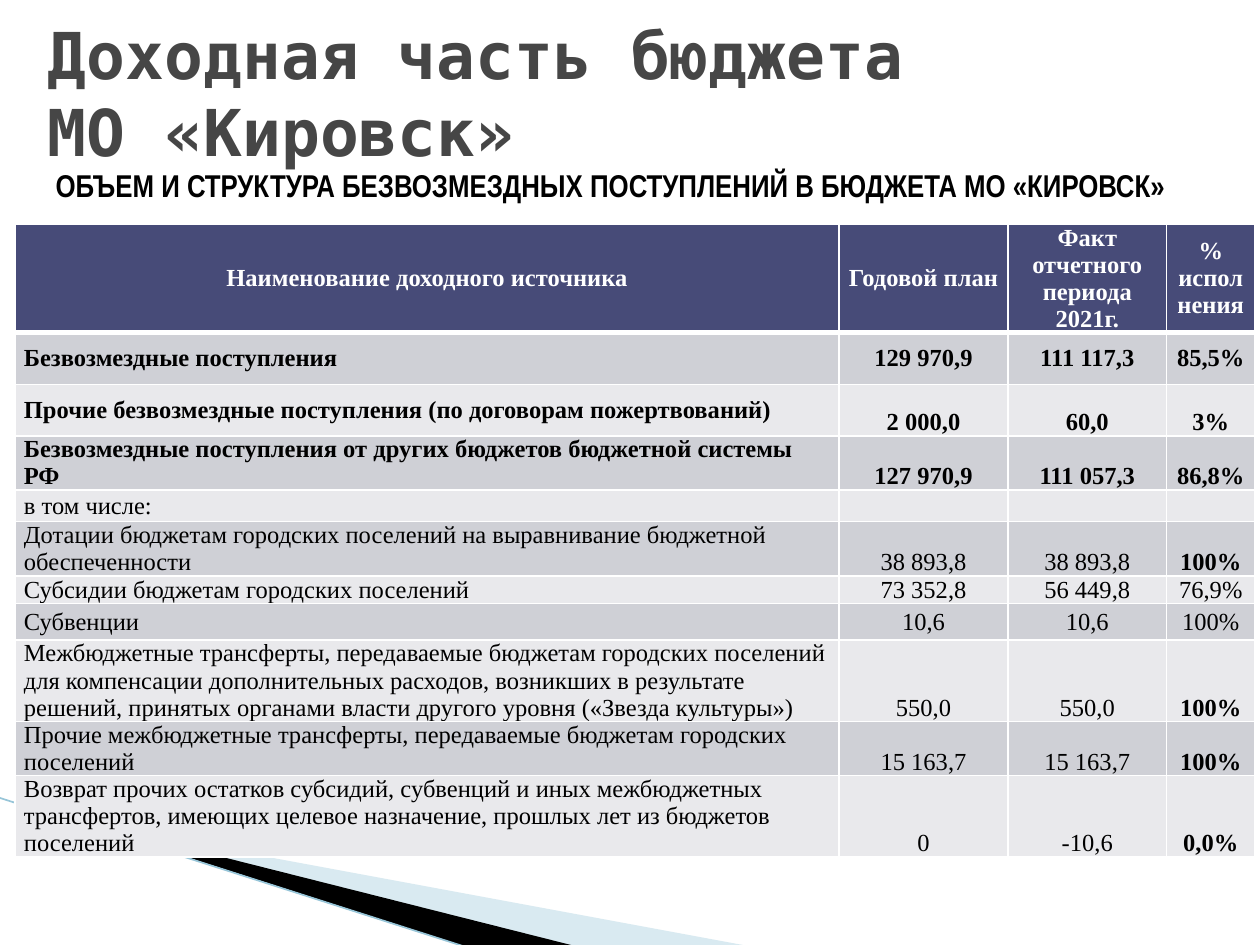
import pptx
import pptx.util
import pptx.dml.color
import pptx.enum.shapes
import pptx.enum.text
import pptx.oxml
import pptx.oxml.ns
from lxml import etree

Pt = pptx.util.Pt
ANCHOR = pptx.enum.text.MSO_ANCHOR
ALIGN = pptx.enum.text.PP_ALIGN

COLORS = {
    "title": "464646", "text": "000000", "white": "FFFFFF",
    "header": "474B78", "odd": "CFD0D6", "even": "E9E9EC",
    "wedge": "A0CBDC", "edge": "97C5D8",
}
TITLE_FONT, LABEL_FONT, TABLE_FONT = "DejaVu Sans Mono", "Arial Narrow", "Times New Roman"

COLUMN_WIDTHS = [65.4, 13.4, 12.6, 7]
HEADER = ["Наименование доходного источника", "Годовой план",
          "Факт отчетного периода 2021г.", "% исполнения"]
# height, texts, bold row, bold percentage, anchor of the values
M, B = ANCHOR.MIDDLE, ANCHOR.BOTTOM
ROWS = [
    (4.1, ["Безвозмездные поступления", "129 970,9", "111 117,3", "85,5%"], True, True, M),
    (4.1, ["Прочие безвозмездные поступления (по договорам пожертвований)",
           "2 000,0", "60,0", "3%"], True, True, B),
    (4.1, ["Безвозмездные поступления от других бюджетов бюджетной системы РФ",
           "127 970,9", "111 057,3", "86,8%"], True, True, B),
    (2.5, ["в том числе:", "", "", ""], False, False, M),
    (4.1, ["Дотации бюджетам городских поселений на выравнивание бюджетной обеспеченности",
           "38 893,8", "38 893,8", "100%"], False, True, B),
    (2.2, ["Субсидии бюджетам городских поселений",
           "73 352,8", "56 449,8", "76,9%"], False, False, M),
    (2.9, ["Субвенции", "10,6", "10,6", "100%"], False, False, M),
    (4.1, ["Межбюджетные трансферты, передаваемые бюджетам городских поселений для "
           "компенсации дополнительных расходов, возникших в результате решений, "
           "принятых органами власти другого уровня («Звезда культуры»)",
           "550,0", "550,0", "100%"], False, True, B),
    (4.1, ["Прочие межбюджетные трансферты, передаваемые бюджетам городских поселений",
           "15 163,7", "15 163,7", "100%"], False, True, B),
    (4.1, ["Возврат прочих остатков субсидий, субвенций и иных межбюджетных трансфертов, "
           "имеющих целевое назначение, прошлых лет из бюджетов поселений",
           "0", "-10,6", "0,0%"], False, True, B),
]


def rgb(name):
    return pptx.dml.color.RGBColor.from_string(COLORS[name])


class Deck:
    """Slide on a grid of 100 columns by 75 rows."""

    def __init__(self, prs):
        self.col, self.row = prs.slide_width / 100, prs.slide_height / 75
        self.s = prs.slides.add_slide(prs.slide_layouts[5])

    def x(self, cols):
        return int(cols * self.col)

    def y(self, rows):
        return int(rows * self.row)

    def box(self, left, top, width, height):
        return self.x(left), self.y(top), self.x(width), self.y(height)

    def set_text(self, tf, text, font, size, color, bold=True, align=ALIGN.LEFT):
        tf.text = text
        p = tf.paragraphs[0]
        p.alignment = align
        for r in p.runs:
            r.font.name, r.font.size, r.font.bold = font, Pt(size), bold
            r.font.color.rgb = rgb(color)
        if not text:
            etree.SubElement(p._p, pptx.oxml.ns.qn("a:endParaRPr"), sz=str(size * 100))

    def title(self, text, *place):
        sp = self.s.shapes.title
        sp.left, sp.top, sp.width, sp.height = self.box(*place)
        tf = sp.text_frame
        tf.word_wrap, tf.vertical_anchor = True, ANCHOR.MIDDLE
        tf.auto_size = pptx.enum.text.MSO_AUTO_SIZE.NONE
        self.set_text(tf, text, TITLE_FONT, 36.9, "title")

    def label(self, text, *place):
        tf = self.s.shapes.add_textbox(*self.box(*place)).text_frame
        tf.word_wrap = True
        tf.auto_size = pptx.enum.text.MSO_AUTO_SIZE.SHAPE_TO_FIT_TEXT
        self.set_text(tf, text, LABEL_FONT, 18, "text", align=ALIGN.CENTER)

    def polygon(self, points, color, alpha=100):
        start, *rest = [(self.x(a), self.y(b)) for a, b in points]
        builder = self.s.shapes.build_freeform(*start)
        builder.add_line_segments(rest, close=True)
        sp = builder.convert_to_shape()
        sp.shadow.inherit = False
        sp.line.fill.background()
        sp.fill.solid()
        sp.fill.fore_color.rgb = rgb(color)
        if alpha < 100:
            clr = sp._element.spPr.find(".//" + pptx.oxml.ns.qn("a:srgbClr"))
            etree.SubElement(clr, pptx.oxml.ns.qn("a:alpha"), val=str(alpha * 1000))

    def line(self, x1, y1, x2, y2, color, width):
        c = self.s.shapes.add_connector(pptx.enum.shapes.MSO_CONNECTOR.STRAIGHT,
                                        self.x(x1), self.y(y1), self.x(x2), self.y(y2))
        c.line.color.rgb, c.line.width = rgb(color), Pt(width)
        etree.SubElement(c._element.spPr, pptx.oxml.ns.qn("a:effectLst"))

    def cell(self, cell, text, fill, color, bold, align, anchor, borders):
        cell.margin_left = cell.margin_right = self.x(0.7)
        cell.margin_top = cell.margin_bottom = 0
        cell.vertical_anchor = anchor
        for side, width in borders.items():
            cell._tc.get_or_add_tcPr().append(pptx.oxml.parse_xml(
                f'<a:ln{side} {pptx.oxml.ns.nsdecls("a")} w="{Pt(width)}"><a:solidFill>'
                f'<a:srgbClr val="{COLORS["white"]}"/></a:solidFill></a:ln{side}>'))
        cell.fill.solid()
        cell.fill.fore_color.rgb = rgb(fill)
        self.set_text(cell.text_frame, text, TABLE_FONT, 14, color, bold, align)

    def table(self, header, rows, widths, left, top):
        height = 4.1 + sum(row[0] for row in rows)
        t = self.s.shapes.add_table(len(rows) + 1, len(widths),
                                    *self.box(left, top, sum(widths), height)).table
        t.first_row = t.horz_banding = False
        for column, width in zip(t.columns, widths):
            column.width = self.x(width)
        t.rows[0].height = self.y(4.1)
        for j, text in enumerate(header):
            self.cell(t.cell(0, j), text, "header", "white", True, ALIGN.CENTER,
                      ANCHOR.MIDDLE, {"L": 1, "R": 1, "T": 1, "B": 3})
        for i, (row_height, texts, bold, bold_share, anchor) in enumerate(rows, 1):
            t.rows[i].height = self.y(row_height)
            for j, text in enumerate(texts):
                self.cell(t.cell(i, j), text, "odd" if i % 2 else "even", "text",
                          bold_share if j == 3 else bold,
                          ALIGN.CENTER if j else ALIGN.LEFT,
                          anchor if j else ANCHOR.MIDDLE, {"L": 1, "R": 1, "B": 1})


def main():
    prs = pptx.Presentation()
    prs.slide_width, prs.slide_height = pptx.util.Inches(10), pptx.util.Inches(7.5)
    deck = Deck(prs)

    # Corner decoration
    deck.polygon([(5.5, 65.1), (59.5, 75.1), (45.6, 75.1), (5.5, 65)], "wedge", 40)
    deck.polygon([(5.3, 64.9), (45.7, 75.1), (37.2, 75.2), (5.4, 65)], "text")
    deck.line(-0.1, 63.3, 37.1, 75.2, "edge", 0.95)

    # Title, table and its heading
    deck.title("Доходная часть бюджета \vМО «Кировск»", 2.8, 1.9, 90, 10.8)
    deck.table(HEADER, ROWS, COLUMN_WIDTHS, 1.2, 17.8)
    deck.label("ОБЪЕМ И СТРУКТУРА БЕЗВОЗМЕЗДНЫХ ПОСТУПЛЕНИЙ В БЮДЖЕТА МО «КИРОВСК»",
               2, 12.7, 92.9, 4)

    prs.save("out.pptx")


if __name__ == "__main__":
    main()
